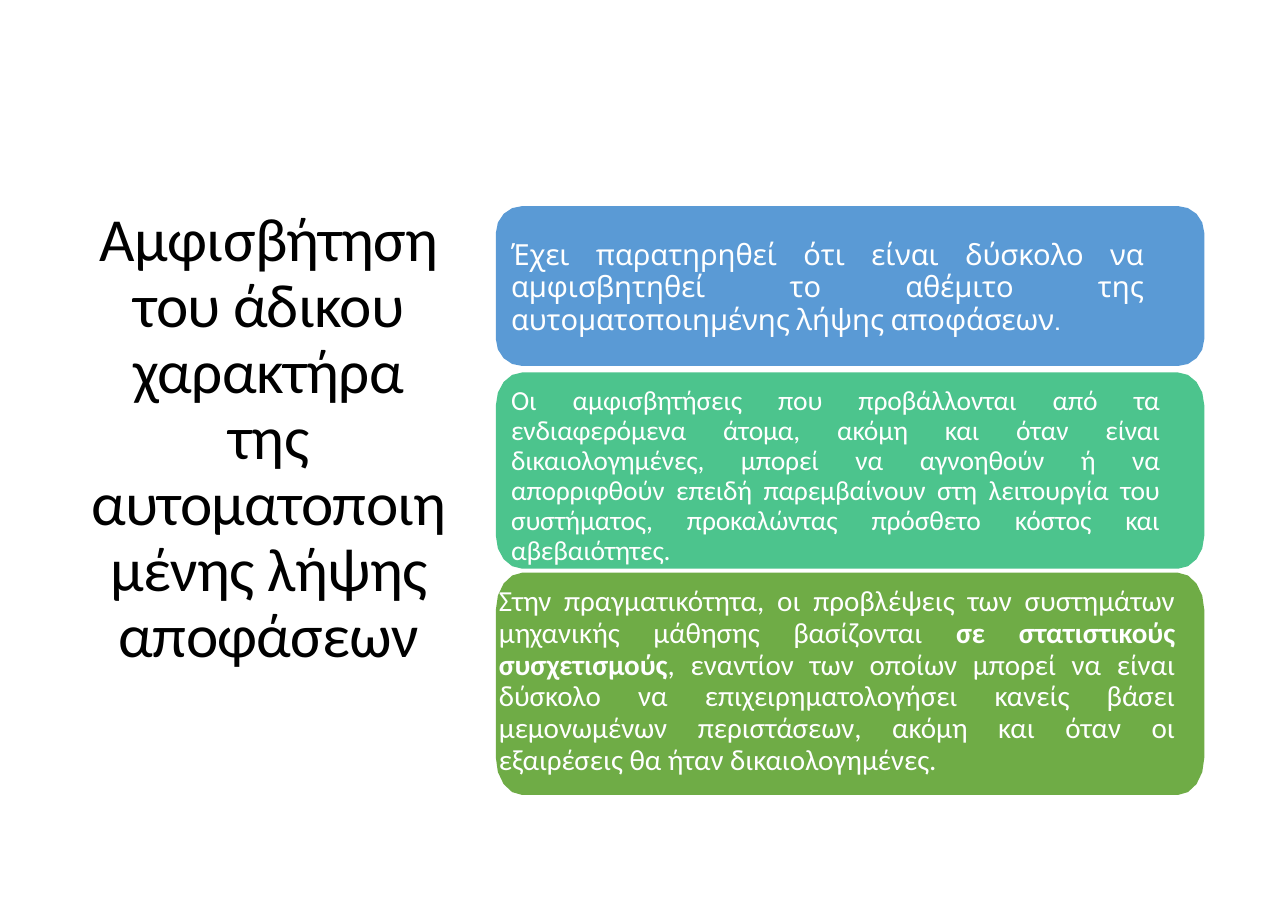
import math
import pptx
import pptx.util
import pptx.dml.color
import pptx.enum.text

Pt = pptx.util.Pt
RGB = pptx.dml.color.RGBColor
ALIGN = pptx.enum.text.PP_ALIGN

BLACK = RGB(0x00, 0x00, 0x00)
WHITE = RGB(0xFF, 0xFF, 0xFF)
BLUE = RGB(0x5A, 0x9A, 0xD5)
TEAL = RGB(0x4C, 0xC4, 0x8D)
GREEN = RGB(0x6F, 0xAC, 0x46)

WIDE, HIGH = 11.69, 8.26
COLS, ROWS = 20, 14
LEFT, SPAN, BEND = 7.7, 11, 0.41  # panel column, width and corner width
STEPS = 4

# Boxes are (column, row, columns, rows); runs are (text, bold).
TITLE = {
    "box": (1.37, 3.05, 5.59, 8.54),
    "runs": [("Αμφισβήτηση του άδικου χαρακτήρα της αυτοματοποιημένης λήψης αποφάσεων", False)],
    "inset": 0.09, "track": -40,
    "font": {"name": "Calibri", "size": Pt(40)}, "color": BLACK,
    "para": {"alignment": ALIGN.CENTER, "line_spacing": 0.9, "space_before": Pt(6.7)},
}
BODY = {"alignment": ALIGN.JUSTIFY, "line_spacing": 0.91, "space_before": Pt(3.1)}
NOTE = {"inset": 0.04, "track": 0, "color": WHITE, "para": BODY}

# Each panel is (row, rows, fill, text).
PANELS = [
    (3.17, 2.46, BLUE, NOTE | {
        "box": (7.92, 3.61, 9.85, 1.58),
        "runs": [("Έχει παρατηρηθεί ότι είναι δύσκολο να αμφισβητηθεί το αθέμιτο της "
                  "αυτοματοποιημένης λήψης αποφάσεων.", False)],
        "font": {"name": "Cabin", "size": Pt(19)},
        "para": BODY | {"line_spacing": Pt(21.1)},
    }),
    (5.73, 3.02, TEAL, NOTE | {
        "box": (7.92, 5.88, 10.09, 2.88),
        "runs": [("Οι αμφισβητήσεις που προβάλλονται από τα ενδιαφερόμενα άτομα, ακόμη και "
                  "όταν είναι δικαιολογημένες, μπορεί να αγνοηθούν ή να απορριφθούν επειδή "
                  "παρεμβαίνουν στη λειτουργία του συστήματος, προκαλώντας πρόσθετο κόστος "
                  "και αβεβαιότητες.", False)],
        "font": {"name": "Calibri", "size": Pt(18)}, "track": -10,
    }),
    (8.81, 3.42, GREEN, NOTE | {
        "box": (7.73, 8.95, 10.52, 3.03),
        "runs": [("Στην πραγματικότητα, οι προβλέψεις των συστημάτων μηχανικής μάθησης "
                  "βασίζονται ", False),
                 ("σε στατιστικούς συσχετισμούς", True),
                 (", εναντίον των οποίων μπορεί να είναι δύσκολο να επιχειρηματολογήσει "
                  "κανείς βάσει μεμονωμένων περιστάσεων, ακόμη και όταν οι εξαιρέσεις θα "
                  "ήταν δικαιολογημένες.", False)],
        "font": {"name": "Calibri", "size": Pt(19)},
    }),
]


def across(cols):
    return pptx.util.Inches(cols * WIDE / COLS)


def down(rows):
    return pptx.util.Inches(rows * HIGH / ROWS)


def apply(item, values):
    for name, value in values.items():
        setattr(item, name, value)


def add_panel(slide, top, rows, color):
    """Draw a panel whose corners are quarter ellipses, a sixth of it high."""
    rise = rows / 6
    points = []
    for turn in range(4 * (STEPS + 1)):
        side, step = divmod(turn, STEPS + 1)
        angle = math.pi / 2 * (side + step / STEPS)
        x = LEFT + (SPAN - BEND if side in (0, 3) else BEND)
        y = top + (rows - rise if side < 2 else rise)
        points.append((across(x + BEND * math.cos(angle)),
                       down(y + rise * math.sin(angle))))
    build = slide.shapes.build_freeform(*points[0])
    build.add_line_segments(points[1:], close=True)
    panel = build.convert_to_shape()
    panel.shadow.inherit = False
    panel.fill.solid()
    panel.fill.fore_color.rgb = color
    panel.line.fill.background()


def add_text(slide, text):
    x, y, cols, rows = text["box"]
    frame = slide.shapes.add_textbox(across(x), down(y), across(cols), down(rows)).text_frame
    apply(frame, {
        "word_wrap": True,
        "auto_size": pptx.enum.text.MSO_AUTO_SIZE.SHAPE_TO_FIT_TEXT,
        "margin_left": pptx.util.Inches(0.01), "margin_right": 0,
        "margin_top": pptx.util.Inches(text["inset"]), "margin_bottom": 0,
    })
    para = frame.paragraphs[0]
    apply(para, text["para"])
    for words, bold in text["runs"]:
        run = para.add_run()
        run.text = words
        apply(run.font, text["font"] | {"bold": bold})
        run.font.color.rgb = text["color"]
        run._r.get_or_add_rPr().set("spc", str(text["track"]))


def main():
    deck = pptx.Presentation()
    deck.slide_width, deck.slide_height = across(COLS), down(ROWS)
    slide = deck.slides.add_slide(deck.slide_layouts[6])
    add_text(slide, TITLE)
    for top, rows, color, text in PANELS:
        add_panel(slide, top, rows, color)
        add_text(slide, text)
    deck.save("out.pptx")


if __name__ == "__main__":
    main()
